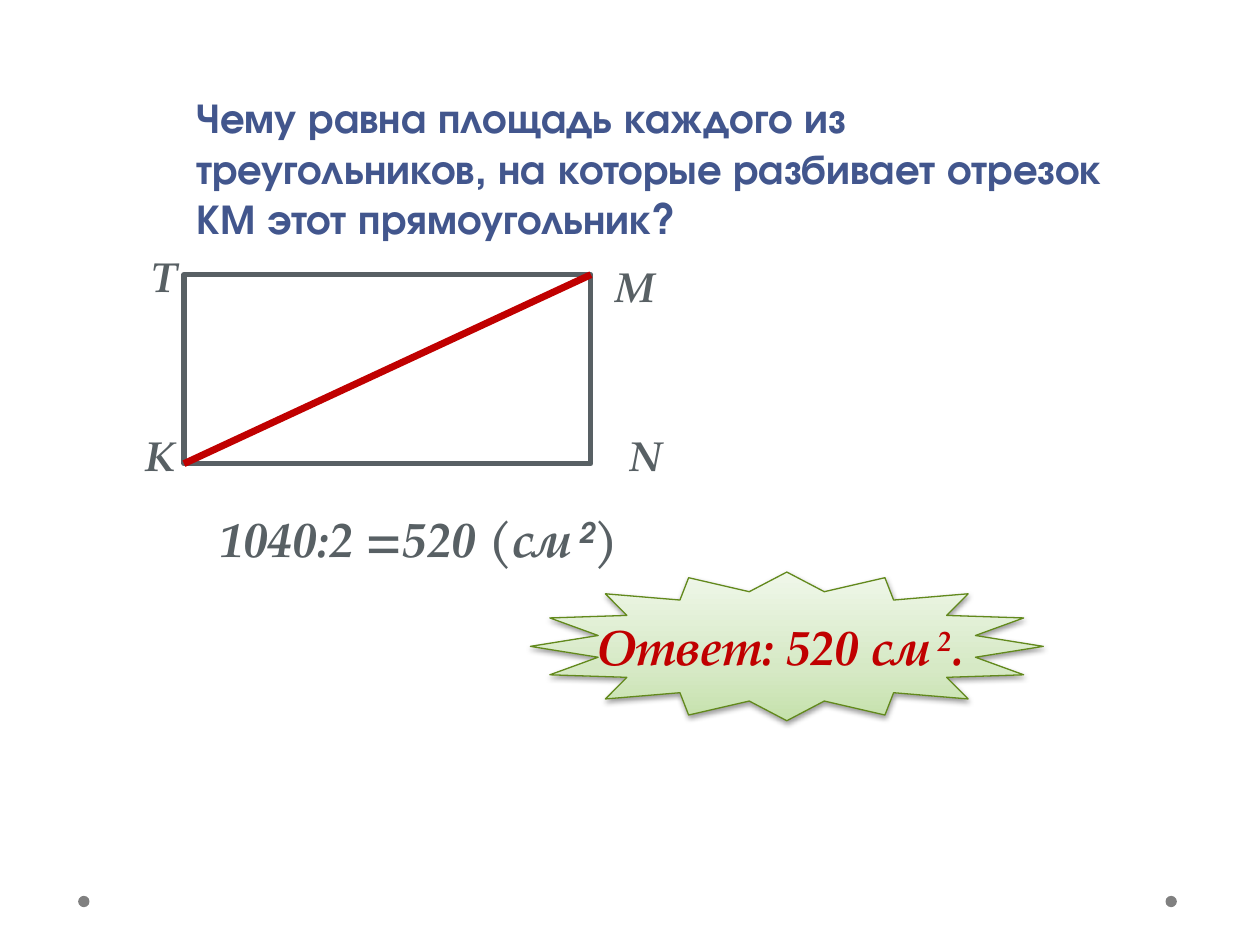
"""Build a geometry slide on the triangles formed by a rectangle's diagonal."""
from copy import deepcopy

from lxml import etree
from pptx import Presentation
from pptx.dml.color import RGBColor
from pptx.enum import shapes, text
from pptx.oxml import ns
from pptx.util import Inches, Pt

BLUE = RGBColor(0x42, 0x56, 0x8D)
SLATE = RGBColor(0x58, 0x60, 0x64)
RED = RGBColor(0xC0, 0x00, 0x00)
GRAY = RGBColor(0x80, 0x80, 0x80)
GREEN = RGBColor(0x62, 0x89, 0x1C)
GLOW = [(0, RGBColor(0xC5, 0xE1, 0xAB)),
        (0.35, RGBColor(0xD6, 0xE9, 0xC5)),
        (1, RGBColor(0xEF, 0xF7, 0xE9))]
SANS = "TeX Gyre Adventor"
SERIF = "TeX Gyre Pagella"


def write(paragraph, wording, color, size, name=SERIF, italic=True, raised=False):
    run = paragraph.add_run()
    run.text = wording
    style = {"name": name, "size": Pt(size), "bold": True, "italic": italic}
    for key, value in style.items():
        setattr(run.font, key, value)
    run.font.color.rgb = color
    if raised:
        run._r.get_or_add_rPr().set("baseline", "30000")


def add_text(left, top, width, height):
    box = slide.shapes.add_textbox(Inches(left), Inches(top), Inches(width), Inches(height))
    box.text_frame.word_wrap = True
    return box.text_frame.paragraphs[0]


prs = Presentation()
prs.slide_width, prs.slide_height = Inches(10), Inches(7.5)
slide = prs.slides.add_slide(prs.slide_layouts[6])

for left in (9.25, 0.62):
    dot = slide.shapes.add_shape(shapes.MSO_SHAPE.OVAL, Inches(left), Inches(7.11),
                                 Inches(0.09), Inches(0.09))
    dot.shadow.inherit = False
    dot.fill.solid()
    dot.fill.fore_color.rgb = GRAY
    dot.line.fill.background()

question = add_text(1.46, 0.68, 7.46, 1.34)
write(question, "Чему равна площадь каждого из треугольников, на которые разбивает "
      "отрезок КМ этот прямоугольник?", BLUE, 24, SANS, italic=False)

rectangle = slide.shapes.add_shape(shapes.MSO_SHAPE.RECTANGLE, Inches(1.46), Inches(2.18),
                                   Inches(3.23), Inches(1.5))
rectangle.shadow.inherit = False
rectangle.fill.background()
rectangle.line.color.rgb = SLATE
rectangle.line.width = Pt(3)

for vertex, left, top in (("T", 1.1, 1.94), ("N", 4.9, 3.36), ("K", 1.06, 3.36), ("M", 4.79, 2.02)):
    write(add_text(left, top, 0.39, 0.63), vertex, SLATE, 24)

solution = add_text(1.64, 3.99, 4.33, 0.55)
write(solution, "1040:2 =520 (см", SLATE, 28)
write(solution, " 2", SLATE, 28, SANS, raised=True)
write(solution, ")", SLATE, 28)

diagonal = slide.shapes.add_connector(
    shapes.MSO_CONNECTOR.STRAIGHT, rectangle.left, rectangle.top + rectangle.height,
    rectangle.left + rectangle.width, rectangle.top)
diagonal.line.color.rgb = RED
diagonal.line.width = Pt(4)
etree.SubElement(diagonal._element.spPr, ns.qn("a:effectLst"))

star = slide.shapes.add_shape(shapes.MSO_SHAPE.STAR_16_POINT, Inches(4.21), Inches(4.54),
                              Inches(4.07), Inches(1.18))
star.fill.gradient()
star.fill.gradient_angle = 90
stop_list = star._element.spPr.find(".//" + ns.qn("a:gsLst"))
stop_list.append(deepcopy(stop_list[-1]))
for stop, (position, color) in zip(star.fill.gradient_stops, GLOW):
    stop.position = position
    stop.color.rgb = color
star.line.color.rgb = GREEN
star.line.width = Pt(0.75)

star.shadow.inherit = False
effects = star._element.spPr.find(ns.qn("a:effectLst"))
shadow = etree.SubElement(effects, ns.qn("a:outerShdw"), blurRad=str(Pt(3.1)),
                          dist=str(Pt(1.6)), dir="5400000", rotWithShape="0")
shade = etree.SubElement(shadow, ns.qn("a:srgbClr"), val="000000")
etree.SubElement(shade, ns.qn("a:alpha"), val="38000")

star.text_frame.word_wrap = False
star.text_frame.vertical_anchor = text.MSO_ANCHOR.MIDDLE
answer = star.text_frame.paragraphs[0]
answer.alignment = text.PP_ALIGN.CENTER
write(answer, "Ответ: 520 см", RED, 28)
write(answer, " 2", RED, 28, raised=True)
write(answer, ". ", RED, 28)

prs.save("out.pptx")
